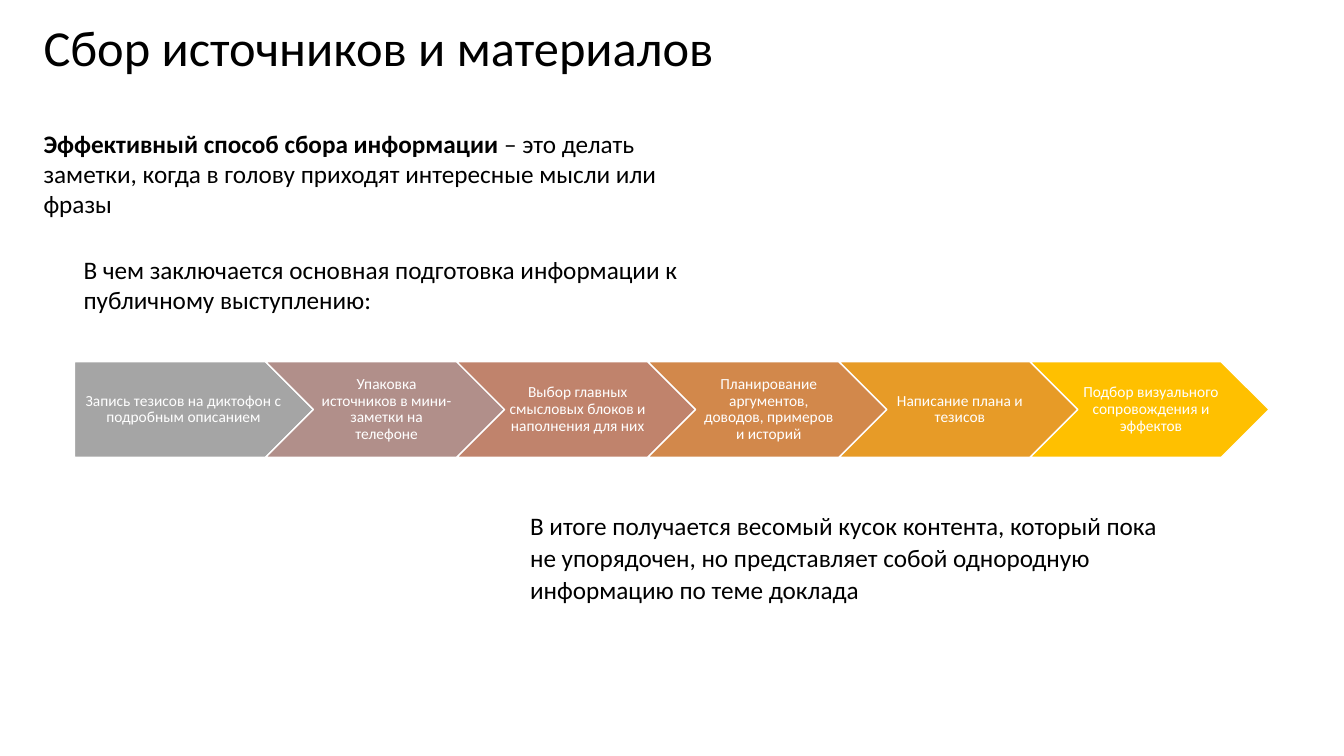
from pptx import Presentation
from pptx.dml.color import RGBColor
from pptx.enum.shapes import MSO_SHAPE as Shape
from pptx.enum.text import MSO_ANCHOR as Anchor, MSO_AUTO_SIZE as AutoSize, PP_ALIGN as Align
from pptx.util import Inches, Pt

COLUMNS = 40
STEP_WIDTH = 7.11
STEP_HEIGHT = 0.4 * STEP_WIDTH
STEP_PITCH = 0.8 * STEP_WIDTH

STEPS = [
    ("Запись тезисов на диктофон с подробным описанием", "A5A5A5"),
    ("Упаковка источников в мини-заметки на телефоне", "B18F8A"),
    ("Выбор главных смысловых блоков и наполнения для них", "C0836C"),
    ("Планирование аргументов, доводов, примеров и историй", "D2884B"),
    ("Написание плана и тезисов", "E79B27"),
    ("Подбор визуального сопровождения и эффектов", "FFC000"),
]


def color(hex_code):
    return RGBColor.from_string(hex_code)


class SlideBuilder:
    """Places styled elements on a grid of square cells, 40 to the slide's width."""

    font = "Calibri"
    ink = "000000"
    paper = "FFFFFF"

    def __init__(self, deck):
        self.slide = deck.slides.add_slide(deck.slide_layouts[6])
        self.cell = deck.slide_width / COLUMNS

    def area(self, *cells):
        return [round(count * self.cell) for count in cells]

    def style(self, paragraph, size, ink, spacing=None, after=None):
        paragraph.line_spacing = spacing
        if after is not None:
            paragraph.space_after = Pt(after)
        for run in paragraph.runs:
            run.font.name = self.font
            run.font.size = Pt(size)
            run.font.color.rgb = color(ink)

    def text(self, place, content, size=18, lead="", anchor=Anchor.TOP, **spacing):
        """Adds a text box; lead is an opening phrase in bold."""
        frame = self.slide.shapes.add_textbox(*self.area(*place)).text_frame
        frame.word_wrap = True
        frame.vertical_anchor = anchor
        if anchor == Anchor.TOP:
            frame.auto_size = AutoSize.SHAPE_TO_FIT_TEXT
        paragraph = frame.paragraphs[0]
        paragraph.text = lead or content
        if lead:
            paragraph.runs[0].font.bold = True
            paragraph.add_run().text = content
        self.style(paragraph, size, self.ink, **spacing)

    def step(self, place, outline, label, fill):
        arrow = self.slide.shapes.add_shape(outline, *self.area(*place))
        arrow.shadow.inherit = False
        arrow.fill.solid()
        arrow.fill.fore_color.rgb = color(fill)
        arrow.line.color.rgb = color(self.paper)
        arrow.line.width = Pt(1)
        frame = arrow.text_frame
        frame.word_wrap = True
        frame.vertical_anchor = Anchor.MIDDLE
        frame.margin_left = Inches(0.05)
        frame.margin_right = Inches(0.02)
        frame.margin_top = frame.margin_bottom = Inches(0.03)
        frame.text = label
        frame.paragraphs[0].alignment = Align.CENTER
        self.style(frame.paragraphs[0], 11, self.paper, spacing=0.9)

    def process(self, left, top, steps):
        """Adds a row of overlapping arrows, the first with a flat back."""
        for index, (label, fill) in enumerate(steps):
            outline = Shape.CHEVRON if index else Shape.PENTAGON
            place = (left + index * STEP_PITCH, top, STEP_WIDTH, STEP_HEIGHT)
            self.step(place, outline, label, fill)


def main():
    deck = Presentation()
    deck.slide_width, deck.slide_height = Inches(13.33), Inches(7.5)
    builder = SlideBuilder(deck)
    builder.text((1, -0.69, 34.5, 4.35), "Сбор источников и материалов",
                 size=36, anchor=Anchor.MIDDLE, spacing=0.9, after=6)
    builder.text((1, 3.66, 20, 3.03),
                 "– это делать заметки, когда в голову приходят интересные мысли или фразы",
                 lead="Эффективный способ сбора информации ")
    builder.process(2.22, 10.77, STEPS)
    builder.text((2.19, 7.41, 20, 2.13),
                 "В чем заключается основная подготовка информации к публичному выступлению:")
    builder.text((15.48, 14.97, 20, 3.18),
                 "В итоге получается весомый кусок контента, который пока не упорядочен, "
                 "но представляет собой однородную информацию по теме доклада",
                 spacing=1.07, after=8)
    deck.save("out.pptx")


if __name__ == "__main__":
    main()
